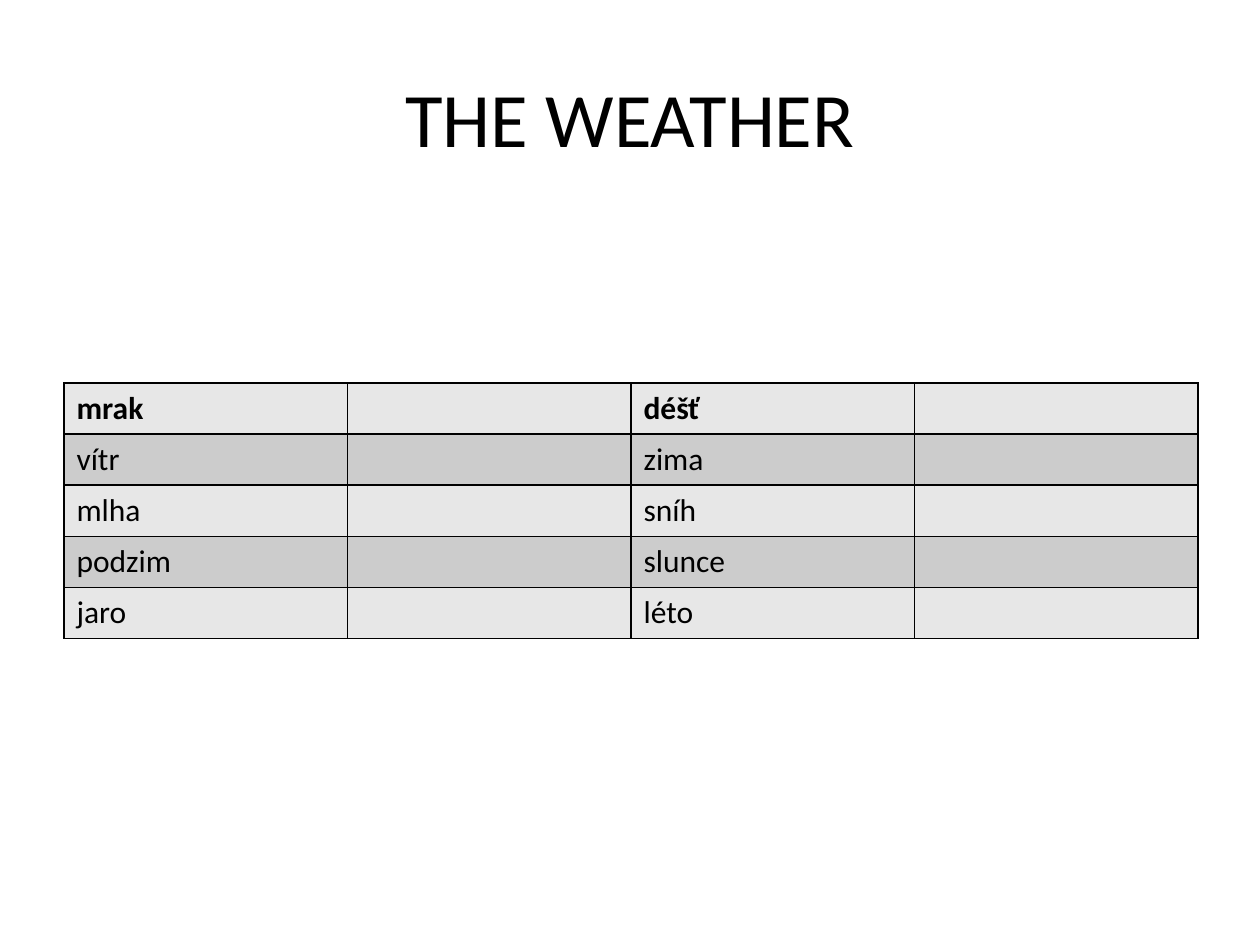
import dataclasses

import lxml.etree
import pptx
import pptx.dml.color
import pptx.enum.text
import pptx.oxml.ns
import pptx.util


@dataclasses.dataclass(frozen=True)
class Theme:
    font: str = "Calibri"
    ink: str = "000000"
    background: str = "FFFFFF"
    bands: tuple = ("E7E7E7", "CCCCCC")
    title_size: int = 44
    cell_size: int = 18
    border_width: int = 1


@dataclasses.dataclass(frozen=True)
class Box:
    left: int
    top: int
    width: int
    height: int


THEME = Theme()
PX_PER_INCH = 126
PAGE = Box(0, 0, 1260, 945)
TITLE_BOX = Box(63, 38, 1134, 157)
TABLE_BOX = Box(64, 383, 1134, 255)
WORDS = [
    ("mrak", "", "déšť", ""),
    ("vítr", "", "zima", ""),
    ("mlha", "", "sníh", ""),
    ("podzim", "", "slunce", ""),
    ("jaro", "", "léto", ""),
]


def px(length):
    return pptx.util.Emu(round(length * 914400 / PX_PER_INCH))


def color(value):
    return pptx.dml.color.RGBColor.from_string(value)


def add_span(para, text, size, bold=False):
    span = para.add_run()
    span.text = text
    span.font.name = THEME.font
    span.font.size = pptx.util.Pt(size)
    span.font.bold = bold
    span.font.color.rgb = color(THEME.ink)


def add_borders(cell):
    properties = cell._tc.get_or_add_tcPr()
    qn = pptx.oxml.ns.qn
    for position, side in enumerate(("lnL", "lnR", "lnT", "lnB")):
        line = lxml.etree.Element(qn(f"a:{side}"))
        line.set("w", str(pptx.util.Pt(THEME.border_width)))
        fill = lxml.etree.SubElement(line, qn("a:solidFill"))
        lxml.etree.SubElement(fill, qn("a:srgbClr")).set("val", THEME.ink)
        properties.insert(position, line)


def place_title(page, box, text):
    title = page.shapes.title
    title.left, title.top = px(box.left), px(box.top)
    title.width, title.height = px(box.width), px(box.height)
    frame = title.text_frame
    frame.vertical_anchor = pptx.enum.text.MSO_ANCHOR.MIDDLE
    para = frame.paragraphs[0]
    para.alignment = pptx.enum.text.PP_ALIGN.CENTER
    add_span(para, text, THEME.title_size)


def place_word_table(page, box, words):
    row_count, column_count = len(words), len(words[0])
    table = page.shapes.add_table(
        row_count, column_count,
        px(box.left), px(box.top), px(box.width), px(box.height),
    ).table
    for column in table.columns:
        column.width = px(box.width / column_count)
    for row_index, row_words in enumerate(words):
        table.rows[row_index].height = px(box.height / row_count)
        for column_index, word in enumerate(row_words):
            cell = table.cell(row_index, column_index)
            cell.fill.solid()
            cell.fill.fore_color.rgb = color(THEME.bands[row_index % 2])
            add_borders(cell)
            para = cell.text_frame.paragraphs[0]
            if word:
                add_span(para, word, THEME.cell_size, bold=row_index == 0)
            else:
                para.font.size = pptx.util.Pt(THEME.cell_size)


def main():
    deck = pptx.Presentation()
    deck.slide_width, deck.slide_height = px(PAGE.width), px(PAGE.height)
    page = deck.slides.add_slide(deck.slide_layouts.get_by_name("Title Only"))
    page.background.fill.solid()
    page.background.fill.fore_color.rgb = color(THEME.background)
    place_title(page, TITLE_BOX, "THE WEATHER")
    place_word_table(page, TABLE_BOX, WORDS)
    deck.save("out.pptx")


if __name__ == "__main__":
    main()
